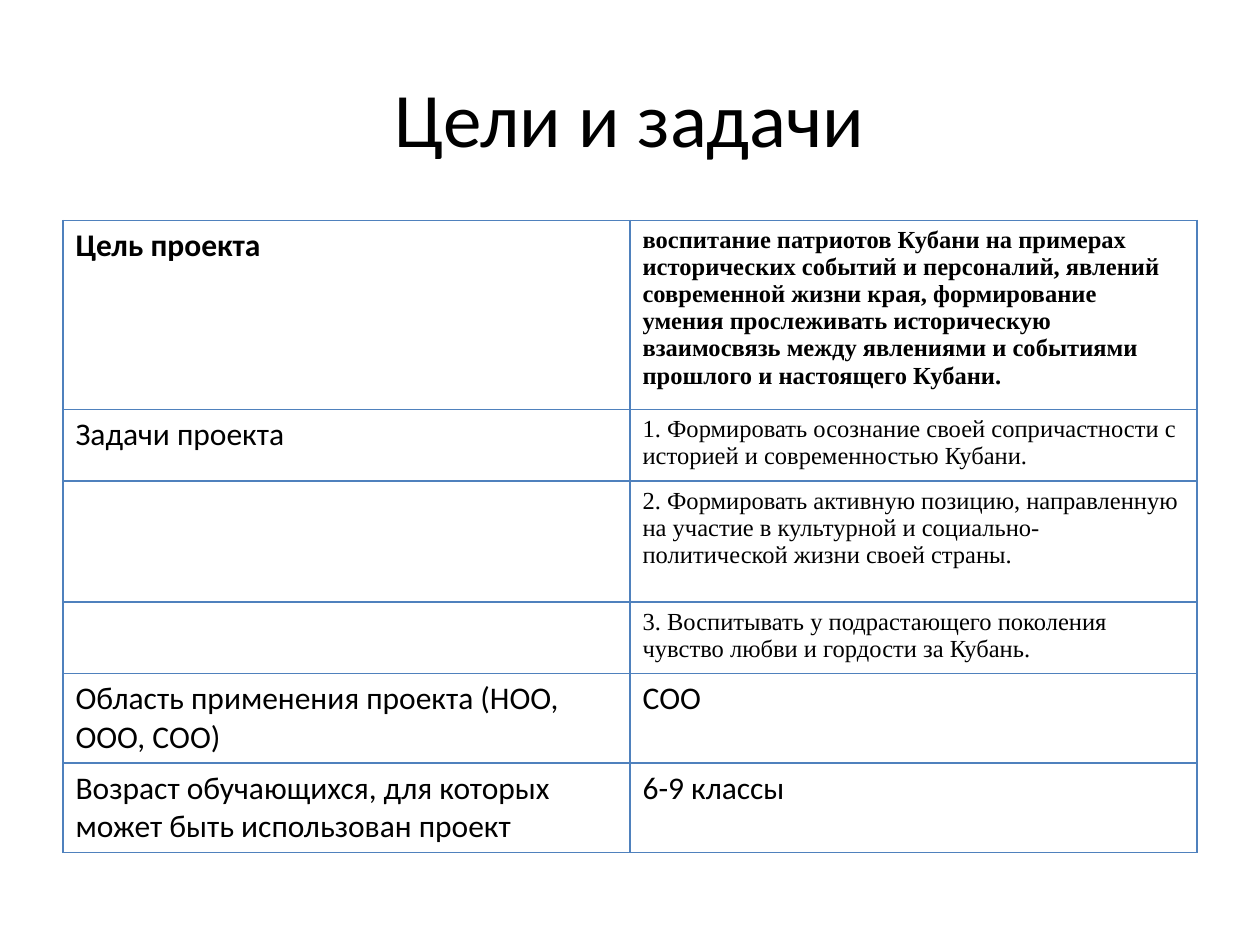
from lxml.etree import SubElement
from pptx import Presentation
from pptx.dml.color import RGBColor
from pptx.enum.text import MSO_ANCHOR, PP_ALIGN
from pptx.oxml.ns import qn
from pptx.util import Inches, Pt

COLORS = {"text": "000000", "cell": "FFFFFF", "border": "4F81BD"}
HEADING, BODY = ("Calibri", 18), ("Times New Roman", 14)

# Row height, label, content, content font
ROWS = [
    (1.39, "Цель проекта",
     "воспитание патриотов Кубани на примерах исторических событий и персоналий, "
     "явлений современной жизни края, формирование умения прослеживать историческую "
     "взаимосвязь между явлениями и событиями прошлого и настоящего Кубани.", BODY),
    (0.53, "Задачи проекта",
     "1. Формировать осознание своей сопричастности с историей и современностью Кубани.", BODY),
    (0.96, "",
     "2. Формировать активную позицию, направленную на участие в культурной и "
     "социально-политической жизни своей страны.", BODY),
    (0.53, "",
     "3. Воспитывать у подрастающего поколения чувство любви и гордости за Кубань.", BODY),
    (0.71, "Область применения проекта (НОО, ООО, СОО)", "СОО", HEADING),
    (0.71, "Возраст обучающихся, для которых может быть использован проект",
     "6-9 классы", HEADING),
]


def add_run(paragraph, text, font, size, bold=False):
    run = paragraph.add_run()
    run.text = text
    run.font.name = font
    run.font.size = Pt(size)
    run.font.bold = bold
    run.font.color.rgb = RGBColor.from_string(COLORS["text"])


def add_borders(cell):
    properties = cell._tc.get_or_add_tcPr()
    for position, side in enumerate(("a:lnL", "a:lnR", "a:lnT", "a:lnB")):
        line = SubElement(properties, qn(side), w=str(Pt(1)))
        fill = SubElement(line, qn("a:solidFill"))
        SubElement(fill, qn("a:srgbClr"), val=COLORS["border"])
        properties.insert(position, line)  # borders precede the cell fill


prs = Presentation()
prs.slide_width, prs.slide_height = Inches(10), Inches(7.5)
slide = prs.slides.add_slide(prs.slide_layouts[6])

title = slide.shapes.add_textbox(Inches(0.5), Inches(0.3), Inches(9), Inches(1.25)).text_frame
title.word_wrap = True
title.vertical_anchor = MSO_ANCHOR.MIDDLE
title.paragraphs[0].alignment = PP_ALIGN.CENTER
add_run(title.paragraphs[0], "Цели и задачи", "Calibri", 44)

total_height = sum(row[0] for row in ROWS)
goals = slide.shapes.add_table(len(ROWS), 2, Inches(0.5), Inches(1.75),
                               Inches(9), Inches(total_height)).table
goals.first_row = goals.horz_banding = False

for index, (height, label, content, content_font) in enumerate(ROWS):
    goals.rows[index].height = Inches(height)
    for column, (text, font) in enumerate([(label, HEADING), (content, content_font)]):
        cell = goals.cell(index, column)
        cell.fill.solid()
        cell.fill.fore_color.rgb = RGBColor.from_string(COLORS["cell"])
        add_borders(cell)
        if text:
            add_run(cell.text_frame.paragraphs[0], text, *font, bold=index == 0)

prs.save("out.pptx")
